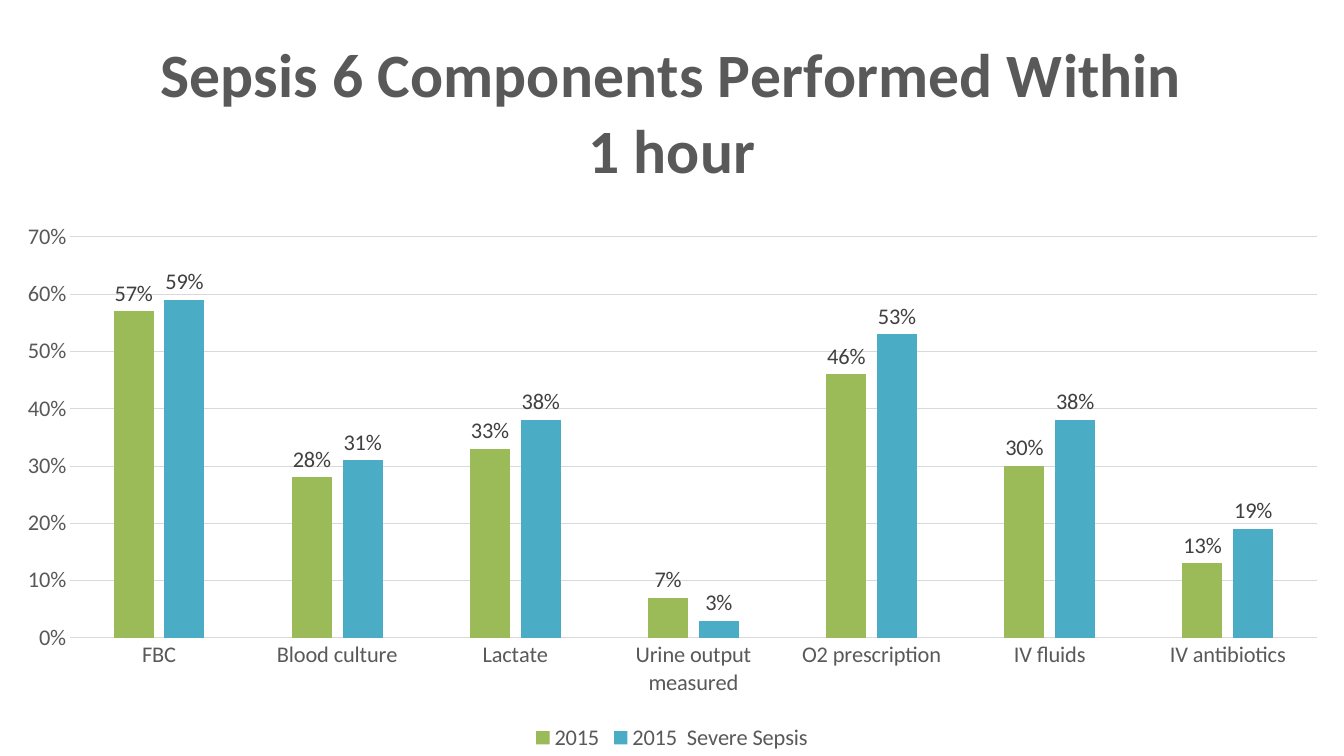
import pptx
import pptx.chart.data
import pptx.dml.color
import pptx.enum.chart
import pptx.oxml
import pptx.oxml.ns
import pptx.util
from dataclasses import dataclass

TITLE = "Sepsis 6 Components Performed Within 1 hour"
CATEGORIES = ["FBC", "Blood culture", "Lactate", "Urine output measured",
              "O2 prescription", "IV fluids", "IV antibiotics"]
SERIES = {
    "2015": [0.57, 0.28, 0.33, 0.07, 0.46, 0.30, 0.13],
    "2015  Severe Sepsis": [0.59, 0.31, 0.38, 0.03, 0.53, 0.38, 0.19],
}
SLIDE_W, SLIDE_H = 1344, 756
PLOT = {"x": 70 / SLIDE_W, "y": 237 / SLIDE_H,
        "w": 1247 / SLIDE_W, "h": 401 / SLIDE_H}
PX = 914400 / 100.8


@dataclass(frozen=True)
class Theme:
    font: str = "Calibri"
    title_size: int = 44
    text_size: int = 16
    text: str = "595959"
    label: str = "404040"
    grid: str = "D9D9D9"
    bars: tuple = ("9BBB59", "4BACC6")


THEME = Theme()


def px(n):
    return pptx.util.Emu(round(n * PX))


def rgb(value):
    return pptx.dml.color.RGBColor.from_string(value)


def set_all(obj, values):
    for name, value in values.items():
        setattr(obj, name, value)


def style_font(font, color=THEME.text, size=THEME.text_size, bold=False):
    set_all(font, {"name": THEME.font, "size": pptx.util.Pt(size), "bold": bold})
    font.color.rgb = rgb(color)


def style_line(line):
    line.color.rgb = rgb(THEME.grid)
    line.width = pptx.util.Pt(0.75)


def place_plot(chart):
    """Fix the inner plot area at the fractions in PLOT."""
    area = chart._chartSpace.find(".//" + pptx.oxml.ns.qn("c:plotArea"))
    for old in area.findall(pptx.oxml.ns.qn("c:layout")):
        area.remove(old)
    sides = "".join(f'<c:{k}Mode val="edge"/>' for k in "xy")
    sides += "".join(f'<c:{k} val="{v:.4f}"/>' for k, v in PLOT.items())
    area.insert(0, pptx.oxml.parse_xml(
        f'<c:layout {pptx.oxml.ns.nsdecls("c")}><c:manualLayout>'
        f'<c:layoutTarget val="inner"/>{sides}</c:manualLayout></c:layout>'))


def add_sepsis_chart(s):
    data = pptx.chart.data.CategoryChartData(number_format="0%")
    data.categories = CATEGORIES
    for name, values in SERIES.items():
        data.add_series(name, values)
    kinds = pptx.enum.chart
    chart = s.shapes.add_chart(kinds.XL_CHART_TYPE.COLUMN_CLUSTERED, 0, 0,
                               px(SLIDE_W), px(SLIDE_H), data).chart
    style_font(chart.font)

    chart.has_title = True
    p = chart.chart_title.text_frame.paragraphs[0]
    r = p.add_run()
    r.text = TITLE
    style_font(r.font, size=THEME.title_size, bold=True)
    chart.chart_title.include_in_layout = False

    chart.has_legend = True
    set_all(chart.legend, {"position": kinds.XL_LEGEND_POSITION.BOTTOM,
                           "include_in_layout": False})
    style_font(chart.legend.font)

    for axis in (chart.category_axis, chart.value_axis):
        set_all(axis, {"major_tick_mark": kinds.XL_TICK_MARK.NONE,
                       "minor_tick_mark": kinds.XL_TICK_MARK.NONE})
        style_font(axis.tick_labels.font)
    style_line(chart.category_axis.format.line)
    value_axis = chart.value_axis
    set_all(value_axis, {"minimum_scale": 0, "maximum_scale": 0.7,
                         "major_unit": 0.1, "has_major_gridlines": True})
    value_axis.format.line.fill.background()
    style_line(value_axis.major_gridlines.format.line)
    set_all(value_axis.tick_labels, {"number_format": "0%",
                                     "number_format_is_linked": False})

    plot = chart.plots[0]
    set_all(plot, {"gap_width": 219, "overlap": -27, "vary_by_categories": False})
    for series, color in zip(plot.series, THEME.bars):
        series.format.fill.solid()
        series.format.fill.fore_color.rgb = rgb(color)
        labels = series.data_labels
        set_all(labels, {"show_value": True, "number_format": "0%",
                         "number_format_is_linked": False,
                         "position": kinds.XL_LABEL_POSITION.OUTSIDE_END})
        style_font(labels.font, THEME.label)
    place_plot(chart)


def main():
    prs = pptx.Presentation()
    set_all(prs, {"slide_width": px(SLIDE_W), "slide_height": px(SLIDE_H)})
    s = prs.slides.add_slide(prs.slide_layouts[6])
    add_sepsis_chart(s)
    prs.save("out.pptx")


if __name__ == "__main__":
    main()
